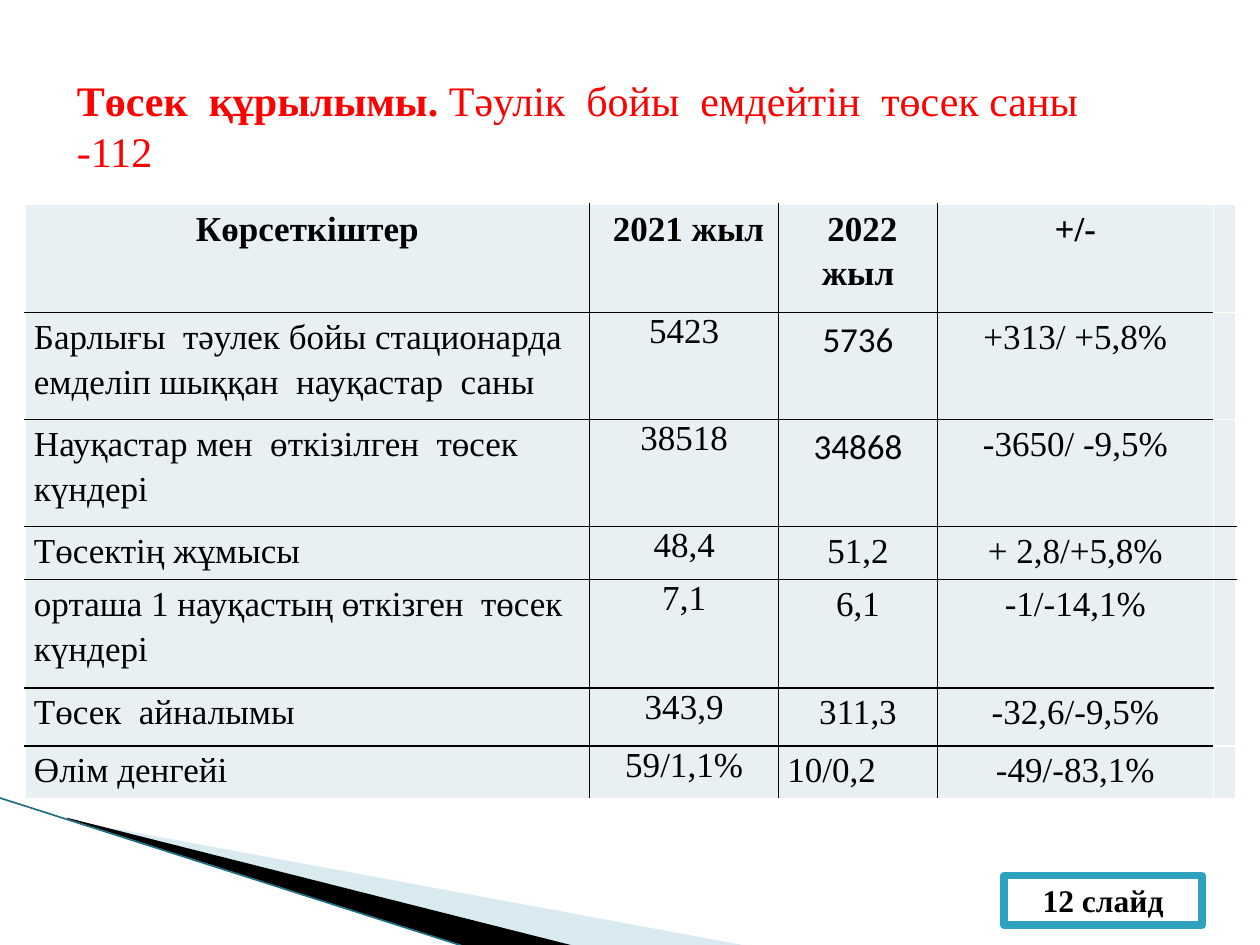
from lxml import etree
from pptx import Presentation
from pptx import util as u
from pptx.dml.color import RGBColor
from pptx.enum import shapes, text
from pptx.oxml.ns import qn

COLORS = {"red": "FF0000", "black": "000000", "white": "FFFFFF", "cell": "E8F0F4",
          "wing": "A0CBDC", "edge": "1F7085", "badge": "2DA2BF"}
SERIF, SANS = "Times New Roman", "Calibri"
LEFT, CENTER = text.PP_ALIGN.LEFT, text.PP_ALIGN.CENTER

TITLE = [("Төсек  құрылымы. ", True), ("Тәулік  бойы  емдейтін  төсек саны -112", False)]
ROWS = [
    ("Көрсеткіштер", " 2021 жыл", " 2022 жыл", "+/-"),
    ("Барлығы  тәулек бойы стационарда  емделіп шыққан  науқастар  саны",
     "5423", "5736", "+313/ +5,8%"),
    ("Науқастар мен  өткізілген  төсек күндері", "38518", "34868", "-3650/ -9,5%"),
    ("Төсектің жұмысы", "48,4", "51,2", "+ 2,8/+5,8%"),
    ("орташа 1 науқастың өткізген  төсек  күндері", "7,1", "6,1", "-1/-14,1%"),
    ("Төсек  айналымы", "343,9", "311,3", "-32,6/-9,5%"),
    ("Өлім денгейі", "59/1,1%", "10/0,2", "-49/-83,1%"),
]
COL_WIDTHS = [4.48, 1.5, 1.26, 2.19, 0.18]
ROW_HEIGHTS = [0.86, 0.85, 0.85, 0.42, 0.86, 0.46, 0.42]
WINGS = [
    ("wing", 40, (0.78, 5.47, 4.16, 1.58),
     [(0.55, 6.51), (5.95, 7.51), (4.56, 7.51), (0.55, 6.5)]),
    ("black", 100, (-0.06, 6.33, 4.16, 0.92),
     [(0.53, 6.49), (4.57, 7.51), (3.72, 7.52), (0.54, 6.5)]),
]
SANS_CELLS = {(1, 2), (2, 2)}
LEFT_CELLS = {(6, 2)}


def rgb(name):
    return RGBColor.from_string(COLORS[name])


def add_text(p, content, size=20, font=SERIF, color="black", bold=False,
             align=LEFT, spacing=None):
    p.alignment = align
    if spacing:
        p.line_spacing = spacing
    r = p.add_run()
    r.text = content
    r.font.size = u.Pt(size)
    r.font.name = font
    r.font.bold = bold
    r.font.color.rgb = rgb(color)


def set_borders(cell, sides):
    tcPr = cell._tc.get_or_add_tcPr()
    for i, (tag, color) in enumerate(sides):
        ln = etree.Element(qn("a:" + tag), w=str(u.Pt(1)))
        fill = etree.SubElement(ln, qn("a:solidFill"))
        etree.SubElement(fill, qn("a:srgbClr"), val=COLORS[color])
        tcPr.insert(i, ln)


def row_line(k, col):
    inner = k in (3, 4) if col == 4 else 0 < k < len(ROWS)
    return "black" if inner else "white"


def col_line(k):
    return "black" if 0 < k < 4 else "white"


def set_frame(sp, frame):
    left, top, width, height = map(u.Inches, frame)
    outline = sp._element.spPr.find(".//" + qn("a:pathLst"))[0]
    for pt in outline.iter(qn("a:pt")):
        pt.set("x", str(int(pt.get("x")) + sp.left - left))
        pt.set("y", str(int(pt.get("y")) + sp.top - top))
    outline.set("w", str(width))
    outline.set("h", str(height))
    sp.left, sp.top, sp.width, sp.height = left, top, width, height


def add_wings(s):
    for color, alpha, frame, points in WINGS:
        pts = [(u.Inches(x), u.Inches(y)) for x, y in points]
        builder = s.shapes.build_freeform(*pts[0])
        builder.add_line_segments(pts[1:])
        sp = builder.convert_to_shape()
        set_frame(sp, frame)
        sp.shadow.inherit = False
        sp.line.fill.background()
        sp.fill.solid()
        sp.fill.fore_color.rgb = rgb(color)
        if alpha < 100:
            clr = sp._element.spPr.find(".//" + qn("a:srgbClr"))
            etree.SubElement(clr, qn("a:alpha"), val=str(alpha * 1000))
    edge = s.shapes.add_connector(shapes.MSO_CONNECTOR.STRAIGHT, u.Inches(-0.01),
                                  u.Inches(6.33), u.Inches(3.71), u.Inches(7.52))
    edge.line.color.rgb = rgb("edge")
    edge.line.width = u.Pt(0.95)
    etree.SubElement(edge._element.spPr, qn("a:effectLst"))


def add_badge(s):
    sp = s.shapes.add_shape(shapes.MSO_SHAPE.RECTANGLE, u.Inches(7.97), u.Inches(6.95),
                            u.Inches(1.57), u.Inches(0.39))
    sp.shadow.inherit = False
    sp.fill.solid()
    sp.fill.fore_color.rgb = rgb("white")
    sp.line.color.rgb = rgb("badge")
    sp.line.width = u.Pt(4.33)
    tf = sp.text_frame
    tf.vertical_anchor = text.MSO_ANCHOR.MIDDLE
    add_text(tf.paragraphs[0], "12 слайд", size=18, bold=True, align=CENTER)


def add_table(s):
    table = s.shapes.add_table(len(ROWS), len(COL_WIDTHS), u.Inches(0.2), u.Inches(1.62),
                               u.Inches(sum(COL_WIDTHS)), u.Inches(sum(ROW_HEIGHTS))).table
    table.first_row = table.horz_banding = False
    for col, width in zip(table.columns, COL_WIDTHS):
        col.width = u.Inches(width)
    for row, height in zip(table.rows, ROW_HEIGHTS):
        row.height = u.Inches(height)
    for i, values in enumerate(ROWS):
        for j in range(len(COL_WIDTHS)):
            cell = table.cell(i, j)
            cell.margin_left = cell.margin_right = u.Inches(0.07)
            cell.margin_top = cell.margin_bottom = 0
            cell.fill.solid()
            cell.fill.fore_color.rgb = rgb("cell")
            set_borders(cell, [("lnL", col_line(j)), ("lnR", col_line(j + 1)),
                               ("lnT", row_line(i, j)), ("lnB", row_line(i + 1, j))])
            if j < len(values):
                flush = (i > 0 and j == 0) or (i, j) in LEFT_CELLS
                add_text(cell.text_frame.paragraphs[0], values[j], bold=i == 0,
                         font=SANS if (i, j) in SANS_CELLS else SERIF,
                         align=LEFT if flush else CENTER,
                         spacing=None if i > 0 and j == 1 else 1.15)
    table.cell(4, 4).merge(table.cell(5, 4))


def add_title(s):
    sp = s.shapes.title
    sp.left, sp.top, sp.width, sp.height = map(u.Inches, (0.51, 0.54, 8.82, 0.91))
    tf = sp.text_frame
    tf.word_wrap = True
    tf.auto_size = text.MSO_AUTO_SIZE.NONE
    tf.vertical_anchor = text.MSO_ANCHOR.MIDDLE
    for content, bold in TITLE:
        add_text(tf.paragraphs[0], content, size=24, color="red", bold=bold)


def main():
    prs = Presentation()
    prs.slide_width, prs.slide_height = u.Inches(10), u.Inches(7.5)
    s = prs.slides.add_slide(prs.slide_layouts[5])
    add_wings(s)
    add_badge(s)
    add_table(s)
    add_title(s)
    prs.save("out.pptx")


if __name__ == "__main__":
    main()
